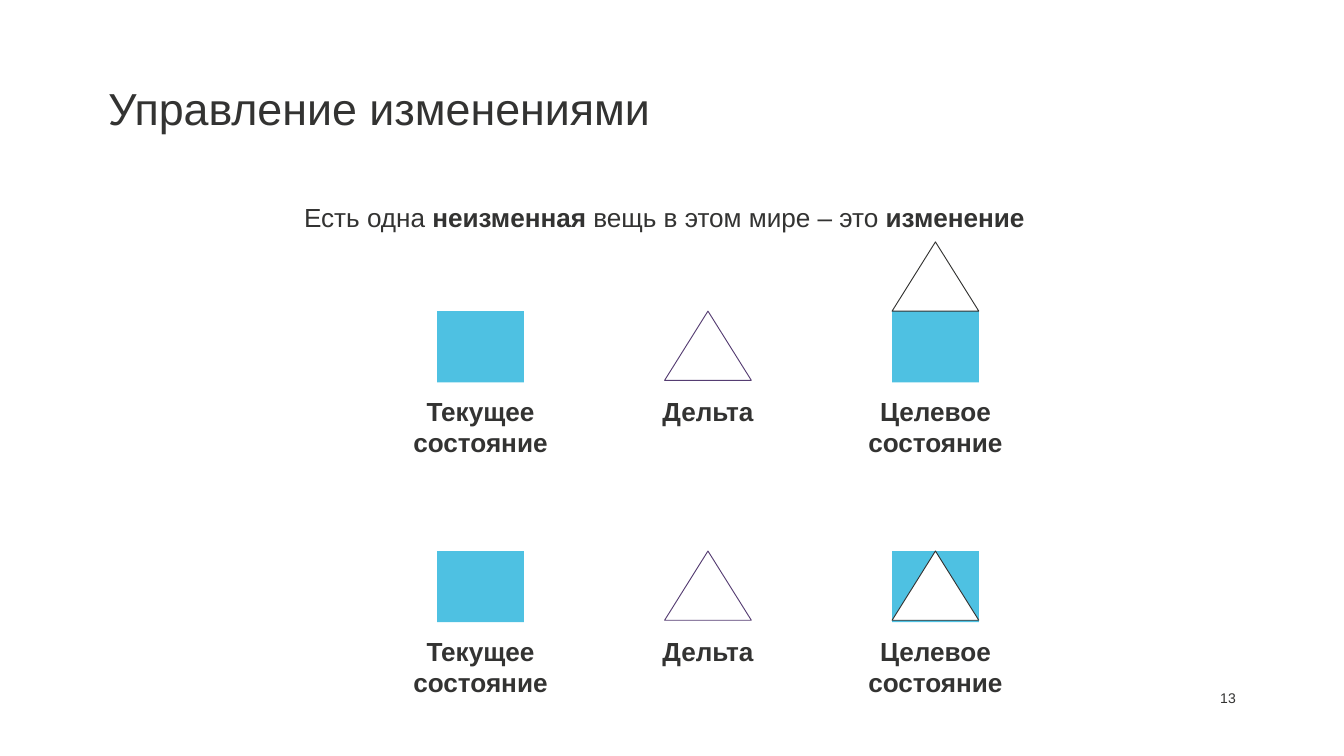
"""Builds a slide on change management: current state, delta and target state."""
from pptx import Presentation
from pptx.dml.color import RGBColor
from pptx.enum.shapes import MSO_SHAPE as Shape
from pptx.enum.text import MSO_ANCHOR as Anchor, PP_ALIGN as Align
from pptx.util import Inches, Pt

INK = RGBColor(0x33, 0x33, 0x32)
BLUE = RGBColor(0x4E, 0xC1, 0xE2)
PLUM = RGBColor(0x55, 0x3D, 0x72)
WHITE = RGBColor(0xFF, 0xFF, 0xFF)
FONT = "Arial"

TITLE = "Управление изменениями"
LEAD = [("Есть одна ", False), ("неизменная ", True),
        ("вещь в этом мире – это ", False), ("изменение", True)]
LABELS = [("Текущее состояние", 1.04), ("Дельта", 0.57), ("Целевое состояние", 1.04)]
PAGE = "13"

WIDE, HIGH = 20, 11.25
MID, STEP = 7.15, 3.385
SIDE, BOX, PEAK = 1.29, 1.06, 1.03
SPAN, DROP = 2.24, 1.2
ROWS = [(4.63, -PEAK, None), (8.2, 0, WHITE)]


def write(home, area, runs, size=28, bold=False, align=Align.CENTER,
          lead=None, pad=0, anchor=Anchor.TOP):
    """Add a text box of one paragraph; runs is a string or (text, bold) pairs."""
    frame = home.add_textbox(*map(Inches, area)).text_frame
    frame.word_wrap = True
    frame.vertical_anchor = anchor
    frame.margin_left = frame.margin_right = Inches(pad)
    frame.margin_top = frame.margin_bottom = Inches(pad / 2)
    para = frame.paragraphs[0]
    para.alignment = align
    para.line_spacing = lead
    for text, heavy in [(runs, bold)] if isinstance(runs, str) else runs:
        run = para.add_run()
        run.text = text
        run.font.name, run.font.size, run.font.bold = FONT, Pt(size), heavy
        run.font.color.rgb = INK


def draw(home, kind, mid, top, high, fill=None, line=None):
    """Add a shape centred on mid."""
    area = mid - SIDE / 2, top, SIDE, high
    shape = home.add_shape(kind, *map(Inches, area))
    shape.shadow.inherit = False
    if fill is None:
        shape.fill.background()
    else:
        shape.fill.solid()
        shape.fill.fore_color.rgb = fill
    if line is None:
        shape.line.fill.background()
    else:
        shape.line.color.rgb = line
        shape.line.width = Pt(1)


def add_row(home, top, shift, fill):
    """Add one row of states with their labels."""
    now, delta, goal = mids = [MID + i * STEP for i in range(len(LABELS))]
    draw(home, Shape.RECTANGLE, goal, top, BOX, BLUE)
    draw(home, Shape.ISOSCELES_TRIANGLE, goal, top + shift, PEAK, fill, INK)
    draw(home, Shape.RECTANGLE, now, top, BOX, BLUE)
    draw(home, Shape.ISOSCELES_TRIANGLE, delta, top, PEAK, line=PLUM)
    for mid, (label, high) in zip(mids, LABELS):
        write(home, (mid - SPAN / 2, top + DROP, SPAN, high), label, bold=True, pad=0.1)


def main():
    """Build and save the slide."""
    deck = Presentation()
    deck.slide_width, deck.slide_height = Inches(WIDE), Inches(HIGH)
    shapes = deck.slides.add_slide(deck.slide_layouts[6]).shapes
    write(shapes, (1.61, 1.25, 12.96, 0.93), TITLE, size=48, align=Align.LEFT, lead=0.96)
    write(shapes, (1.5, 2.9, 16.77, 7.01), LEAD, lead=1.2)
    for row in ROWS:
        add_row(shapes.add_group_shape().shapes, *row)
    write(shapes, (16.95, 9.88, 1.44, 0.63), PAGE, size=15, align=Align.RIGHT,
          anchor=Anchor.BOTTOM)
    deck.save("out.pptx")


if __name__ == "__main__":
    main()
